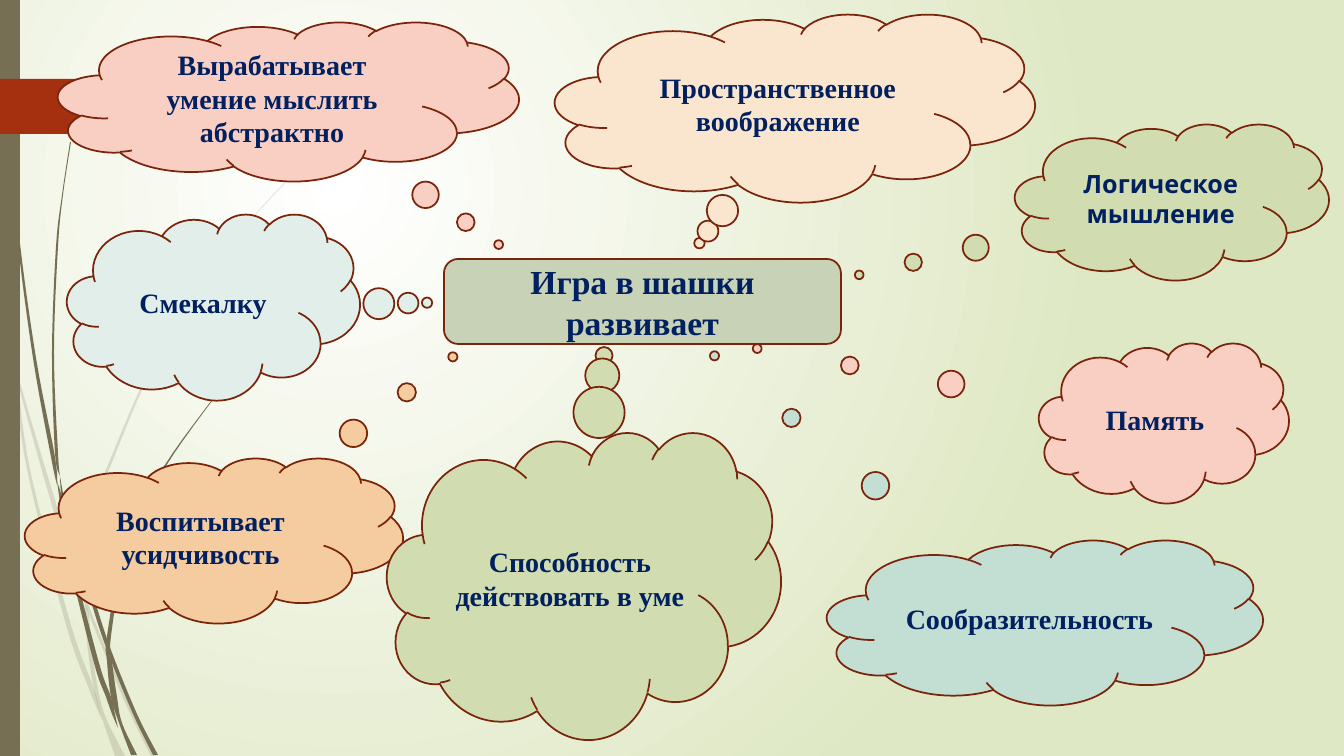
import pptx
import pptx.util
import pptx.dml.color
import pptx.enum.shapes
import pptx.enum.text
import pptx.oxml
import pptx.oxml.ns

SCALE = 914400 / 100.8
WIDTH, HEIGHT = 1344, 756
SHAPES = pptx.enum.shapes.MSO_SHAPE
SERIF = "Times New Roman"
OLIVE, RUST, OUTLINE, NAVY = "766F54", "A53010", "7A240C", "002060"

# Each row of a strand is (y, left edge, right edge).
PALE_STRANDS = [
    [(284, 0, 0), (301, 0, 5), (325, 5, 9), (353, 11, 11)],
    [(348, 14, 14), (379, 17, 19), (526, 58, 63), (604, 85, 88),
     (700, 124, 128), (756, 151, 156)],
    [(353, 11, 11), (379, 14, 17), (474, 28, 31), (625, 66, 71),
     (689, 89, 94), (720, 102, 102)],
    [(604, 85, 85), (615, 85, 89), (651, 88, 92), (689, 94, 98),
     (718, 102, 106), (756, 115, 125)],
    [(154, 314, 315), (198, 270, 271), (246, 230, 231), (351, 159, 161),
     (465, 108, 111), (505, 95, 98), (589, 86, 89), (601, 86, 89)],
]
DARK_STRANDS = [
    [(0, 3, 4), (48, 4, 5), (110, 7, 8), (235, 17, 19), (358, 33, 36),
     (457, 51, 55), (485, 57, 57)],
    [(481, 57, 57), (509, 61, 65), (561, 69, 73), (663, 94, 99),
     (697, 106, 111), (714, 112, 115), (728, 118, 118)],
    [(476, 60, 60), (509, 64, 67), (595, 89, 93), (650, 107, 111),
     (714, 133, 137), (755, 153, 158)],
    [(142, 70, 71), (195, 62, 63), (247, 56, 58), (352, 52, 54),
     (453, 55, 58), (476, 60, 60)],
    [(347, 262, 263), (376, 233, 234), (409, 205, 206), (478, 157, 159),
     (555, 123, 126), (636, 107, 111), (661, 107, 112), (697, 111, 117),
     (723, 119, 122), (755, 131, 137)],
]
CLOUDS = [
    ((1015, 124, 314, 156), (-0.996, 0.467), "D1DDB0", "Логическое мышление", 18, "League Spartan"),
    ((67, 214, 293, 186), (0.729, -0.023), "E1EEE9", "Смекалку", 20, SERIF),
    ((827, 540, 436, 165), (-0.758, -1.616), "C3DED3", "Сообразительность", 20, SERIF),
    ((58, 22, 461, 159), (0.456, 0.9), "F9CFC3", "Вырабатывает умение мыслить абстрактно", 20, SERIF),
    ((25, 458, 378, 165), (0.632, -1.113), "F5CBA0", "Воспитывает усидчивость", 20, SERIF),
    ((555, 14, 480, 188), (-0.199, 0.719), "FAE5CF", "Пространственное воображение", 20, SERIF),
    ((1039, 343, 250, 160), (-1.627, -0.465), "F9CFC3", "Память", 20, SERIF),
    ((387, 432, 394, 307), (0.051, -0.749), "D1DDB0", "Способность действовать в уме", 20, SERIF),
]


def px(n):
    return pptx.util.Emu(round(n * SCALE))


def rgb(value):
    return pptx.dml.color.RGBColor.from_string(value)


def paint(shape, fill, line=None):
    shape.shadow.inherit = False
    shape.fill.solid()
    shape.fill.fore_color.rgb = rgb(fill)
    if line:
        shape.line.color.rgb = rgb(line)
        shape.line.width = pptx.util.Pt(1.25)
    else:
        shape.line.fill.background()


def add_box(s, kind, box, fill, line=None):
    shape = s.shapes.add_shape(kind, *map(px, box))
    paint(shape, fill, line)
    return shape


def add_outline(s, points, fill):
    points = [(px(x), px(y)) for x, y in points]
    builder = s.shapes.build_freeform(*points[0], scale=1.0)
    builder.add_line_segments(points[1:], close=True)
    shape = builder.convert_to_shape()
    paint(shape, fill)
    return shape


def smooth(rows, steps=6):
    padded = [rows[0], *rows, rows[-1]]
    result = []
    for a, b, c, d in zip(padded, padded[1:], padded[2:], padded[3:]):
        for i in range(steps):
            t = i / steps
            result.append([
                q + t * (r - p + t * (2 * p - 5 * q + 4 * r - u + t * (3 * (q - r) + u - p))) / 2
                for p, q, r, u in zip(a, b, c, d)])
    return result + [rows[-1]]


def add_strand(s, rows, fill, alpha=None):
    rows = smooth(rows)
    left = [(x, y) for y, x, _ in rows]
    right = [(x, y) for y, _, x in reversed(rows)]
    shape = add_outline(s, left + right, fill)
    if alpha:
        color = shape._element.spPr.find(".//" + pptx.oxml.ns.qn("a:srgbClr"))
        color.append(pptx.oxml.parse_xml(
            f'<a:alpha {pptx.oxml.ns.nsdecls("a")} val="{alpha * 1000}"/>'))


def add_label(shape, text, size, font):
    tf = shape.text_frame
    tf.word_wrap = True
    tf.vertical_anchor = pptx.enum.text.MSO_ANCHOR.MIDDLE
    p = tf.paragraphs[0]
    p.text = text
    p.alignment = pptx.enum.text.PP_ALIGN.CENTER
    p.font.name = font
    p.font.size = pptx.util.Pt(size)
    p.font.bold = True
    p.font.color.rgb = rgb(NAVY)


def add_background(s):
    fill = s.background.fill
    fill.gradient()
    for stop, color in zip(fill.gradient_stops, ("FFFFFF", "DFE8C4")):
        stop.color.rgb = rgb(color)
    lin = s._element.find(".//" + pptx.oxml.ns.qn("a:lin"))
    lin.getparent().replace(lin, pptx.oxml.parse_xml(
        f'<a:path {pptx.oxml.ns.nsdecls("a")} path="circle">'
        '<a:fillToRect l="50000" t="50000" r="100000" b="100000"/></a:path>'))


def add_left_decor(s, box):
    x, y, w, h = box
    for rows in PALE_STRANDS:
        add_strand(s, rows, OLIVE, 20)
    for rows in DARK_STRANDS:
        add_strand(s, rows, OLIVE)
    add_box(s, SHAPES.RECTANGLE, (x, y, w, h), OLIVE)
    tab = [(0, 79), (147, 79), (175, 107), (147, 134), (0, 134)]
    add_outline(s, [(x + dx, y + dy) for dx, dy in tab], RUST)


def add_cloud(s, box, tail, fill, text, size, font):
    cloud = add_box(s, SHAPES.CLOUD_CALLOUT, box, fill, OUTLINE)
    cloud.adjustments[0], cloud.adjustments[1] = tail
    add_label(cloud, text, size, font)


def add_topic(s, box):
    topic = add_box(s, SHAPES.ROUNDED_RECTANGLE, box, "C7D2B7", OUTLINE)
    add_label(topic, "Игра в шашки развивает", 24, SERIF)


def main():
    prs = pptx.Presentation()
    prs.slide_width, prs.slide_height = px(WIDTH), px(HEIGHT)
    s = prs.slides.add_slide(prs.slide_layouts[6])
    add_background(s)
    add_left_decor(s, (0, 0, 20, HEIGHT))
    add_topic(s, (444, 259, 397, 85))
    for cloud in CLOUDS:
        add_cloud(s, *cloud)
    prs.save("out.pptx")


if __name__ == "__main__":
    main()
